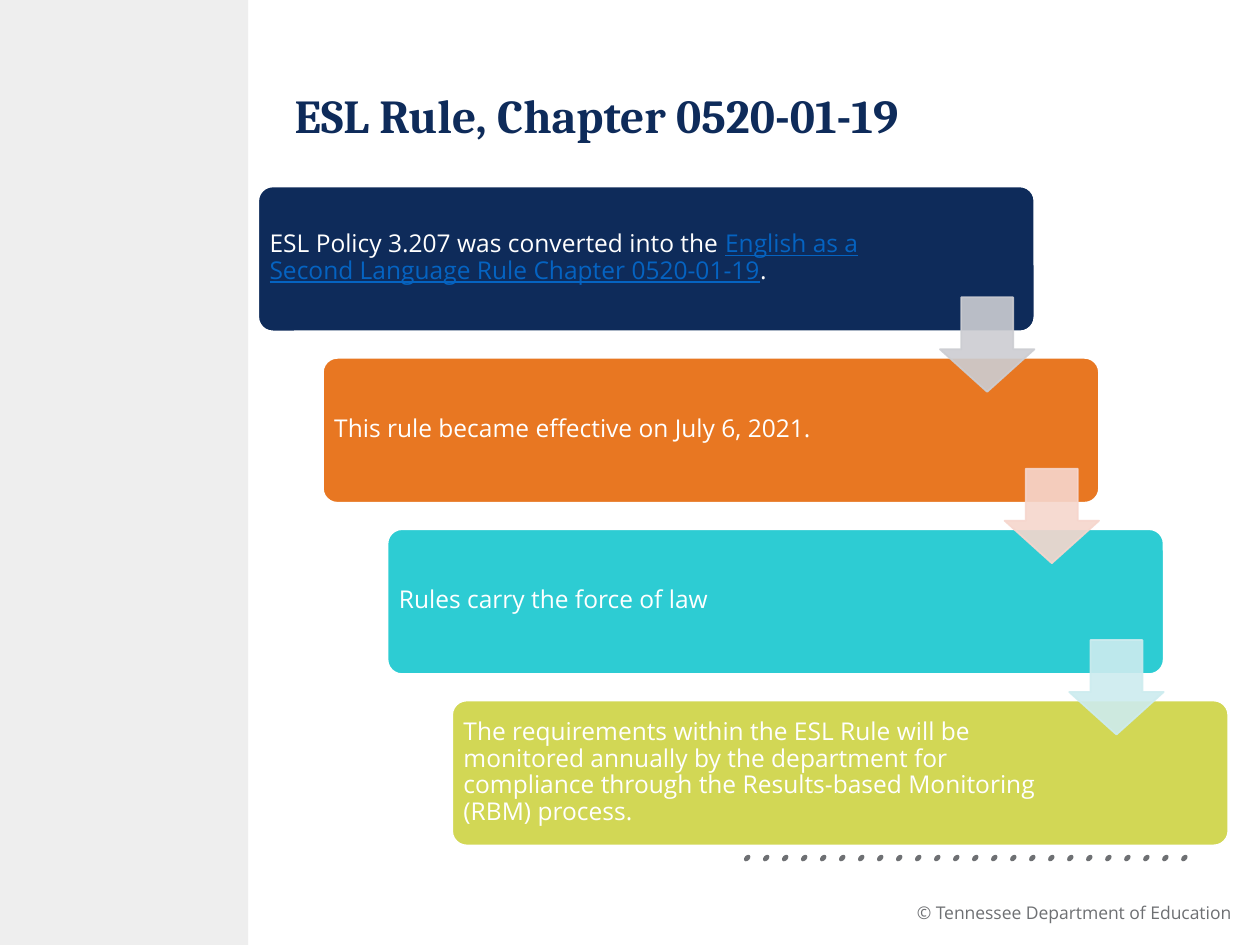
from dataclasses import dataclass

from lxml import etree
from pptx import Presentation
from pptx.dml.color import RGBColor
from pptx.enum.shapes import MSO_SHAPE
from pptx.enum.text import MSO_ANCHOR, PP_ALIGN
from pptx.oxml.ns import qn
from pptx.util import Inches, Pt

RECTANGLE = MSO_SHAPE.RECTANGLE
OVAL = MSO_SHAPE.OVAL
ROUNDED_RECTANGLE = MSO_SHAPE.ROUNDED_RECTANGLE
DOWN_ARROW = MSO_SHAPE.DOWN_ARROW
MIDDLE = MSO_ANCHOR.MIDDLE
TOP = MSO_ANCHOR.TOP
RIGHT = PP_ALIGN.RIGHT


@dataclass(frozen=True)
class Theme:
    heading_font: str = "Cambria"
    body_font: str = "Open Sans"
    title_size: int = 27
    body_size: int = 14
    footer_size: int = 10
    navy: str = "0E2B5A"
    white: str = "FFFFFF"
    link: str = "0563C1"
    gray: str = "6E7073"
    panel: str = "EEEEEE"
    cards: tuple = ("0E2B5A", "E87722", "2DCCD3", "D2D755")
    arrows: tuple = ("CCCDD2", "F6D6CD", "CDECEF")


theme = Theme()

presentation = Presentation()
presentation.slide_width = Inches(10)
presentation.slide_height = Inches(7.5)
slide = presentation.slides.add_slide(presentation.slide_layouts[6])


def add_filled_shape(kind, left, top, width, height, fill, line=None):
    shape = slide.shapes.add_shape(
        kind, Inches(left), Inches(top), Inches(width), Inches(height))
    shape.shadow.inherit = False
    shape.fill.solid()
    shape.fill.fore_color.rgb = RGBColor.from_string(fill)
    if line:
        shape.line.color.rgb = RGBColor.from_string(line)
        shape.line.width = Pt(1)
    else:
        shape.line.fill.background()
    return shape


def add_text(left, top, width, height, runs, font, size, color, anchor=MIDDLE, inset=None):
    """Add a wrapped text box with one paragraph and return that paragraph."""
    frame = slide.shapes.add_textbox(
        Inches(left), Inches(top), Inches(width), Inches(height)).text_frame
    frame.word_wrap = True
    frame.vertical_anchor = anchor
    if inset is not None:
        frame.margin_left = frame.margin_right = Inches(inset)
        frame.margin_top = frame.margin_bottom = Inches(inset)
    paragraph = frame.paragraphs[0]
    paragraph.font.name = font
    paragraph.font.size = Pt(size)
    paragraph.font.color.rgb = RGBColor.from_string(color)
    for text in runs:
        paragraph.add_run().text = text
    return paragraph


# Side panel, footer and dotted rule
add_filled_shape(RECTANGLE, 0, 0, 1.97, 7.5, theme.panel)

footer = add_text(6.74, 7.13, 3.13, 0.25, ["© Tennessee Department of Education"],
                  theme.body_font, theme.footer_size, theme.gray, anchor=TOP)
footer.alignment = RIGHT
footer.line_spacing = 0.9

DOT_COUNT = 24
first_dot, last_dot = 5.9, 9.37
dot_step = (last_dot - first_dot) / (DOT_COUNT - 1)
for index in range(DOT_COUNT):
    dot = add_filled_shape(OVAL, first_dot + index * dot_step, 6.79, 0.06, 0.04, theme.gray)
    dot.rotation = 314.4

# Title
title = add_text(2.24, 0.25, 7.37, 1.32, ["ESL Rule, Chapter 0520-01-19"],
                 theme.heading_font, theme.title_size, theme.navy)
title.font.bold = True

# Staircase of cards
card_texts = [
    ["ESL Policy 3.207 was converted into the ",
     "English as a Second Language Rule Chapter 0520-01-19", "."],
    ["This rule became effective on July 6, 2021."],
    ["Rules carry the force of law"],
    ["The requirements within the ESL Rule will be monitored annually by the "
     "department for compliance through the Results-based Monitoring (RBM) process."],
]
STEP_X, STEP_Y = 0.513, 1.36
card_paragraphs = []
for index, (runs, color) in enumerate(zip(card_texts, theme.cards)):
    left, top = 2.05 + index * STEP_X, 1.48 + index * STEP_Y
    card = add_filled_shape(ROUNDED_RECTANGLE, left, top, 6.16, 1.15, color, theme.white)
    card.adjustments[0] = 0.1
    paragraph = add_text(left + 0.03, top + 0.03, 4.83, 1.08, runs,
                         theme.body_font, theme.body_size, theme.white, inset=0.06)
    paragraph.line_spacing = 0.9
    card_paragraphs.append(paragraph)

rule_name = card_paragraphs[0].runs[1]
rule_name.font.color.rgb = RGBColor.from_string(theme.link)
rule_name.font.underline = True

# Translucent arrows from each card to the next
for index, color in enumerate(theme.arrows):
    arrow = add_filled_shape(DOWN_ARROW, 7.46 + index * STEP_X, 2.36 + index * STEP_Y,
                             0.75, 0.75, color, color)
    arrow.adjustments[0] = 0.55
    arrow.adjustments[1] = 0.45
    for color_element in arrow.element.spPr.iter(qn("a:srgbClr")):
        etree.SubElement(color_element, qn("a:alpha"), val="90000")

presentation.save("out.pptx")
